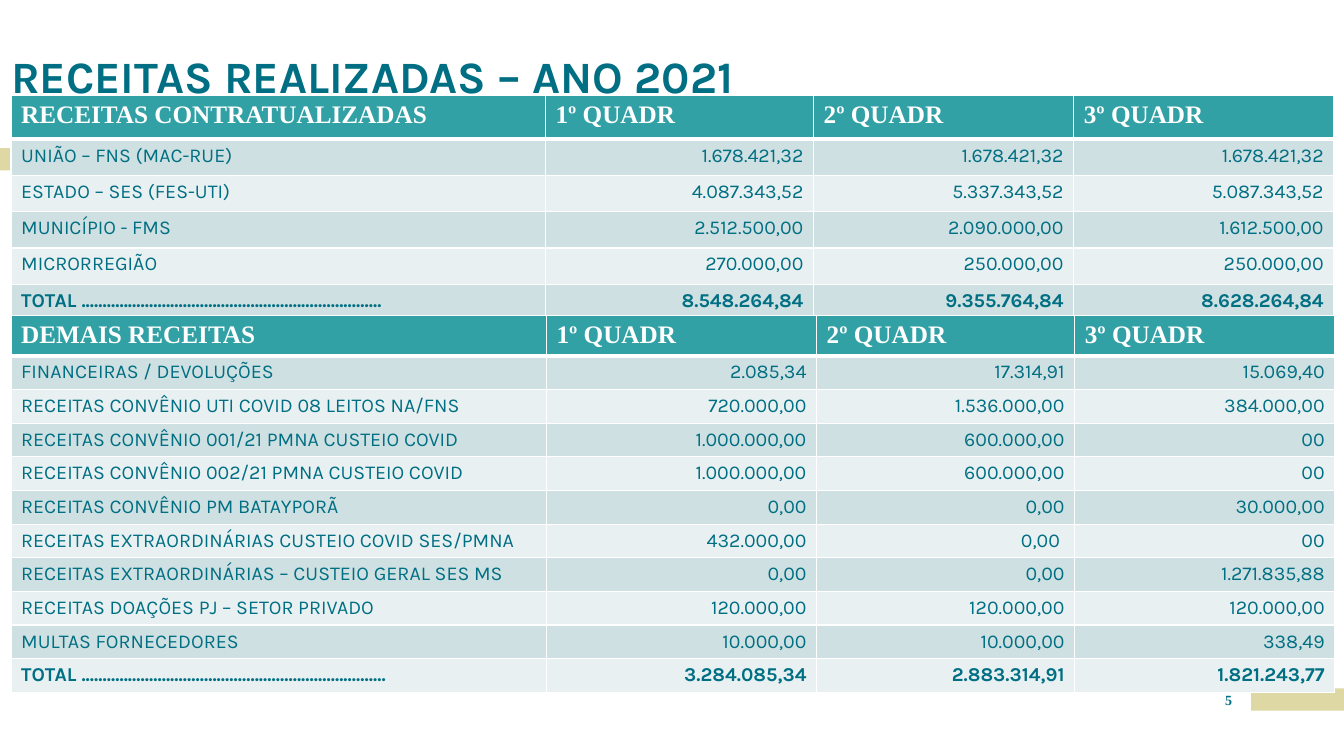
from lxml.etree import SubElement
from pptx import Presentation
from pptx.dml.color import RGBColor
from pptx.enum.shapes import MSO_SHAPE
from pptx.enum.text import MSO_ANCHOR, PP_ALIGN
from pptx.oxml.ns import qn
from pptx.util import Inches, Pt

TEAL = RGBColor(0x32, 0xA1, 0xA6)
DARK_TEAL = RGBColor(0x00, 0x6F, 0x83)
BAND_DARK = RGBColor(0xCE, 0xE0, 0xE1)
BAND_LIGHT = RGBColor(0xE8, 0xF0, 0xF1)
SAND = RGBColor(0xDE, 0xD8, 0xA4)
WHITE = RGBColor(0xFF, 0xFF, 0xFF)
SANS, SERIF = "Karla", "Times New Roman"

# Content
TITLE = "RECEITAS REALIZADAS – ANO 2021"
PAGE_NUMBER = "5"
QUARTERS = ("1º QUADR", "2º QUADR", "3º QUADR")
CONTRACTED = [
    ("RECEITAS CONTRATUALIZADAS", *QUARTERS),
    ("UNIÃO – FNS (MAC-RUE)", "1.678.421,32", "1.678.421,32", "1.678.421,32"),
    ("ESTADO – SES (FES-UTI)", "4.087.343,52", "5.337.343,52", "5.087.343,52"),
    ("MUNICÍPIO - FMS", "2.512.500,00", "2.090.000,00", "1.612.500,00"),
    ("MICRORREGIÃO", "270.000,00", "250.000,00", "250.000,00"),
    ("TOTAL .......................................................................",
     "8.548.264,84", "9.355.764,84", "8.628.264,84"),
]
OTHER = [
    ("DEMAIS RECEITAS", *QUARTERS),
    ("FINANCEIRAS / DEVOLUÇÕES", "2.085,34", "17.314,91", "15.069,40"),
    ("RECEITAS CONVÊNIO UTI COVID 08 LEITOS NA/FNS", "720.000,00", "1.536.000,00", "384.000,00"),
    ("RECEITAS CONVÊNIO 001/21 PMNA CUSTEIO COVID", "1.000.000,00", "600.000,00", "00"),
    ("RECEITAS CONVÊNIO 002/21 PMNA CUSTEIO COVID", "1.000.000,00", "600.000,00", "00"),
    ("RECEITAS CONVÊNIO PM BATAYPORÃ", "0,00", "0,00", "30.000,00"),
    ("RECEITAS EXTRAORDINÁRIAS CUSTEIO COVID SES/PMNA", "432.000,00", "0,00 ", "00"),
    ("RECEITAS EXTRAORDINÁRIAS – CUSTEIO GERAL SES MS", "0,00", "0,00", "1.271.835,88"),
    ("RECEITAS DOAÇÕES PJ – SETOR PRIVADO", "120.000,00", "120.000,00", "120.000,00"),
    ("MULTAS FORNECEDORES", "10.000,00", "10.000,00", "338,49"),
    ("TOTAL ........................................................................",
     "3.284.085,34", "2.883.314,91", "1.821.243,77"),
]
# Top, column widths, header height, row height, rows
TABLES = [
    (0.95, (5.3, 2.66, 2.58, 2.58), 0.43, 0.36, CONTRACTED),
    (3.13, (5.31, 2.68, 2.56, 2.58), 0.39, 0.33, OTHER),
]
BARS = [(12.41, 6.83, 0.92, 0.22), (0, 1.47, 2.97, 0.22)]
TABLE_LEFT = 0.11


def style_text(para, font, size, color, bold):
    for span in para.runs:
        span.font.name = font
        span.font.size = Pt(size)
        span.font.color.rgb = color
        span.font.bold = bold


def add_text(slide, text, area, font, size):
    box = slide.shapes.add_textbox(*map(Inches, area))
    frame = box.text_frame
    frame.word_wrap = True
    frame.margin_left = frame.margin_top = frame.margin_right = frame.margin_bottom = 0
    frame.text = text
    style_text(frame.paragraphs[0], font, size, DARK_TEAL, True)
    return frame


def set_borders(cell, top, bottom):
    properties = cell._tc.get_or_add_tcPr()
    sides = (("a:lnL", 1), ("a:lnR", 1), ("a:lnT", top), ("a:lnB", bottom))
    for position, (tag, width) in enumerate(sides):
        line = SubElement(properties, qn(tag), w=str(Pt(width)))
        fill = SubElement(line, qn("a:solidFill"))
        SubElement(fill, qn("a:srgbClr"), val=str(WHITE))
        properties.insert(position, line)


def add_revenue_table(slide, top, widths, header_height, row_height, rows):
    height = header_height + row_height * (len(rows) - 1)
    table = slide.shapes.add_table(
        len(rows), len(widths), Inches(TABLE_LEFT), Inches(top),
        Inches(sum(widths)), Inches(height)).table
    for column, width in zip(table.columns, widths):
        column.width = Inches(width)
    for r, values in enumerate(rows):
        header, total = r == 0, r == len(rows) - 1
        table.rows[r].height = Inches(header_height if header else row_height)
        for c, value in enumerate(values):
            cell = table.cell(r, c)
            cell.fill.solid()
            cell.fill.fore_color.rgb = TEAL if header else BAND_DARK if r % 2 else BAND_LIGHT
            set_borders(cell, 3 if r == 1 else 1, 3 if header else 1)
            para = cell.text_frame.paragraphs[0]
            para.text = value
            if header:
                style_text(para, SERIF, 18, WHITE, True)
            else:
                style_text(para, SANS, 14, DARK_TEAL, total)
                para.alignment = PP_ALIGN.RIGHT if c else PP_ALIGN.LEFT


def main():
    deck = Presentation()
    deck.slide_width, deck.slide_height = Inches(13.33), Inches(7.5)
    slide = deck.slides.add_slide(deck.slide_layouts[6])

    # Sand bars at the edges
    for area in BARS:
        bar = slide.shapes.add_shape(MSO_SHAPE.RECTANGLE, *map(Inches, area))
        bar.shadow.inherit = False
        bar.fill.solid()
        bar.fill.fore_color.rgb = SAND
        bar.line.fill.background()

    # Title and page number
    title = add_text(slide, TITLE, (0.11, 0, 9.34, 1.02), SANS, 32)
    title.vertical_anchor = MSO_ANCHOR.BOTTOM
    title.paragraphs[0].line_spacing = 0.9
    number = add_text(slide, PAGE_NUMBER, (12.04, 6.86, 0.29, 0.25), SERIF, 10)
    number.paragraphs[0].alignment = PP_ALIGN.CENTER

    # Revenue tables
    for layout in TABLES:
        add_revenue_table(slide, *layout)

    deck.save("out.pptx")


if __name__ == "__main__":
    main()
